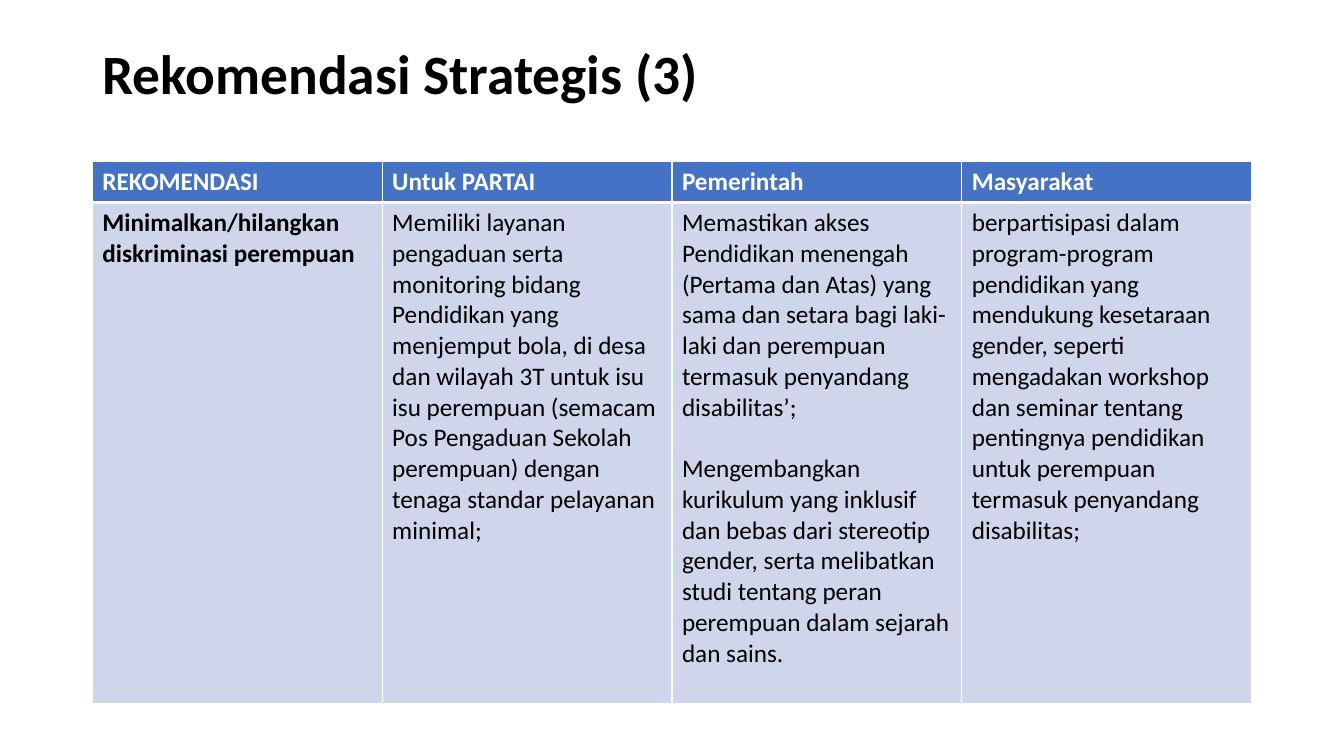
from lxml.etree import SubElement
from pptx import Presentation
from pptx.dml.color import RGBColor
from pptx.enum.text import MSO_ANCHOR, MSO_AUTO_SIZE, PP_ALIGN
from pptx.oxml.ns import qn
from pptx.util import Emu, Pt

PX = 9525
COLORS = {"ink": "000000", "paper": "FFFFFF", "header": "4472C4", "body": "CFD5EA"}

HEADERS = ["REKOMENDASI", "Untuk PARTAI", "Pemerintah", "Masyarakat"]
RECOMMENDATION = [
    ["Minimalkan/hilangkan diskriminasi perempuan"],
    ["Memiliki layanan pengaduan serta monitoring bidang Pendidikan yang "
     "menjemput bola, di desa dan wilayah 3T untuk isu isu perempuan (semacam "
     "Pos Pengaduan Sekolah perempuan) dengan tenaga standar pelayanan minimal;"],
    ["Memastikan akses Pendidikan menengah (Pertama dan Atas) yang sama dan "
     "setara bagi laki-laki dan perempuan termasuk penyandang disabilitas’;",
     "Mengembangkan kurikulum yang inklusif dan bebas dari stereotip gender, "
     "serta melibatkan studi tentang peran perempuan dalam sejarah dan sains."],
    ["berpartisipasi dalam program-program pendidikan yang mendukung kesetaraan "
     "gender, seperti mengadakan workshop dan seminar tentang pentingnya "
     "pendidikan untuk perempuan termasuk penyandang disabilitas;"],
]


def px(n):
    return Emu(n * PX)


def rgb(name):
    return RGBColor.from_string(COLORS[name])


class SlideBuilder:
    font = "Calibri"
    table_size = 18
    paragraph_gap = 22

    def __init__(self, prs):
        self.slide = prs.slides.add_slide(prs.slide_layouts[5])

    def run(self, p, text, size, color, bold):
        r = p.add_run()
        r.text = text
        r.font.name = self.font
        r.font.size = Pt(size)
        r.font.bold = bold
        r.font.color.rgb = rgb(color)

    def title(self, text, x, y, w, h):
        sp = self.slide.shapes.title
        sp.left, sp.top, sp.width, sp.height = map(px, (x, y, w, h))
        tf = sp.text_frame
        tf.auto_size = MSO_AUTO_SIZE.NONE
        tf.word_wrap = True
        tf.vertical_anchor = MSO_ANCHOR.MIDDLE
        p = tf.paragraphs[0]
        p.alignment = PP_ALIGN.LEFT
        p.line_spacing = 0.9
        self.run(p, text, 39.6, "ink", True)

    def borders(self, cell, top, bottom):
        """Draw white cell edges, with top and bottom widths in points."""
        tc_pr = cell._tc.get_or_add_tcPr()
        for side, width in (("L", 1), ("R", 1), ("T", top), ("B", bottom)):
            ln = SubElement(tc_pr, qn(f"a:ln{side}"), w=str(Pt(width)))
            fill = SubElement(ln, qn("a:solidFill"))
            SubElement(fill, qn("a:srgbClr"), val=COLORS["paper"])

    def cell(self, cell, paragraphs, fill, color, bold, edges):
        self.borders(cell, *edges)
        cell.fill.solid()
        cell.fill.fore_color.rgb = rgb(fill)
        tf = cell.text_frame
        for i, text in enumerate(paragraphs):
            p = tf.add_paragraph() if i else tf.paragraphs[0]
            if i:
                p.space_before = Pt(self.paragraph_gap)
            self.run(p, text, self.table_size, color, bold)

    def table(self, headers, body, x, y, w, row_heights):
        frame = self.slide.shapes.add_table(
            2, len(headers), px(x), px(y), px(w), px(sum(row_heights)))
        table = frame.table
        for row, height in zip(table.rows, row_heights):
            row.height = px(height)
        for col, (header, paragraphs) in enumerate(zip(headers, body)):
            table.columns[col].width = px(w // len(headers))
            self.cell(table.cell(0, col), [header], "header", "paper", True, (1, 3))
            self.cell(table.cell(1, col), paragraphs, "body", "ink", col == 0, (3, 1))


def main():
    prs = Presentation()
    prs.slide_width, prs.slide_height = px(1280), px(720)
    s = SlideBuilder(prs)
    s.title("Rekomendasi Strategis (3)", 88, 38, 1104, 69)
    s.table(HEADERS, RECOMMENDATION, 88, 154, 1104, (38, 477))
    prs.save("out.pptx")


if __name__ == "__main__":
    main()
